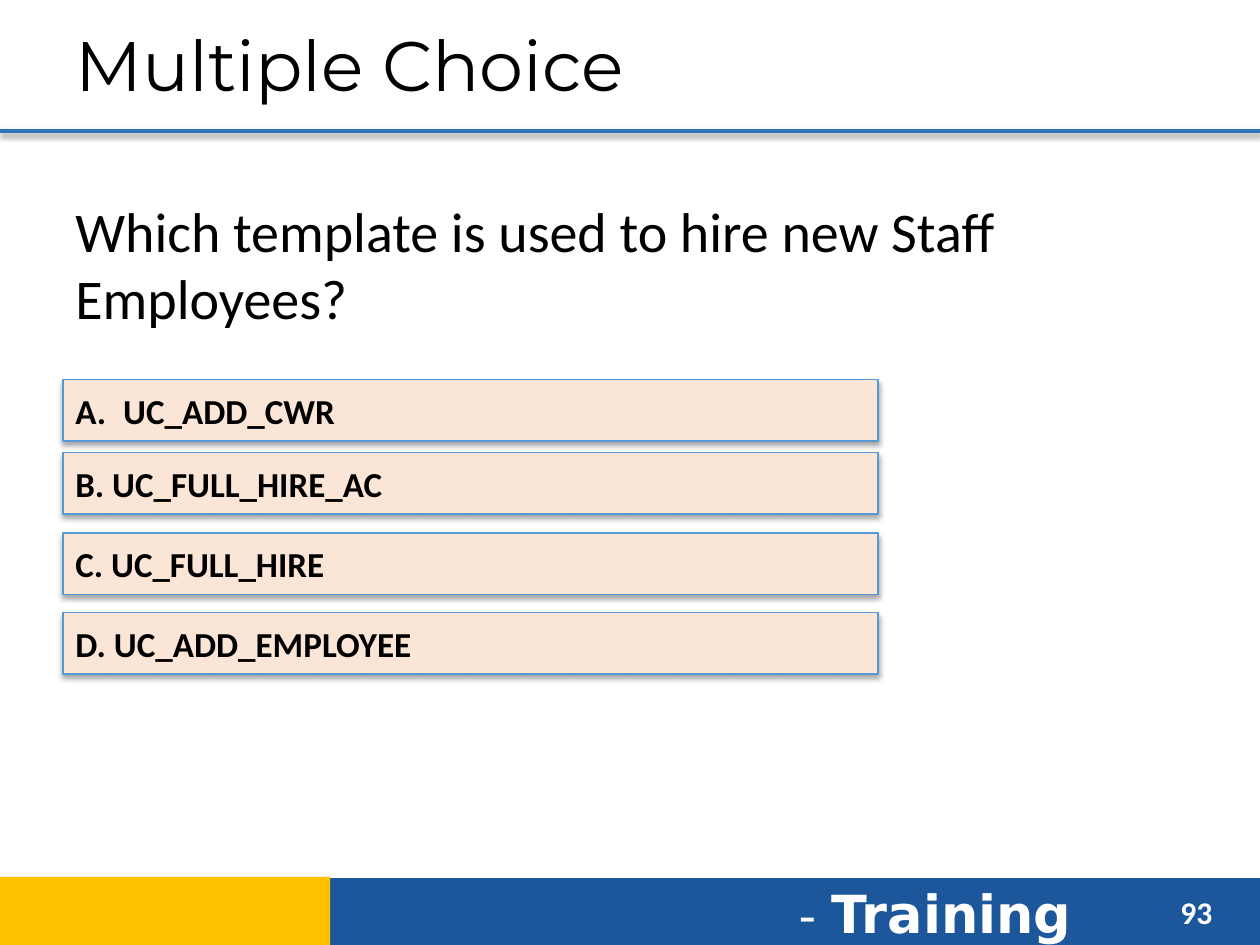
from lxml import etree
from pptx import Presentation
from pptx.dml.color import RGBColor
from pptx.enum.shapes import MSO_CONNECTOR, MSO_SHAPE
from pptx.enum.text import MSO_ANCHOR, MSO_AUTO_SIZE, PP_ALIGN
from pptx.oxml.ns import qn
from pptx.util import Inches, Pt

RECTANGLE = MSO_SHAPE.RECTANGLE
STRAIGHT = MSO_CONNECTOR.STRAIGHT
TOP, MIDDLE = MSO_ANCHOR.TOP, MSO_ANCHOR.MIDDLE
LEFT = PP_ALIGN.LEFT
NO_AUTOFIT = MSO_AUTO_SIZE.NONE

BLACK = RGBColor(0x00, 0x00, 0x00)
WHITE = RGBColor(0xFF, 0xFF, 0xFF)
FOOTER_BLUE = RGBColor(0x1D, 0x57, 0x9B)
FOOTER_GOLD = RGBColor(0xFF, 0xC0, 0x00)
RULE_BLUE = RGBColor(0x2E, 0x75, 0xB6)
ANSWER_FILL = RGBColor(0xFB, 0xE5, 0xD6)
ANSWER_BORDER = RGBColor(0x56, 0x98, 0xD3)

TITLE_FORMAT = {"name": "Montserrat", "size": Pt(40), "bold": False}
QUESTION_FORMAT = {"name": "Calibri", "size": Pt(32)}
ANSWER_FORMAT = {"name": "Calibri", "size": Pt(20), "bold": True}
NUMBER_FORMAT = {"name": "Calibri", "size": Pt(18), "bold": True}
DASH_FORMAT = {"name": "DejaVu Sans", "size": Pt(28)}
TRAINING_FORMAT = {"name": "DejaVu Sans", "size": Pt(30), "bold": True}

ANSWERS = [
    (3.01, "UC_ADD_CWR"),
    (3.59, "B. UC_FULL_HIRE_AC"),
    (4.23, "C. UC_FULL_HIRE"),
    (4.86, "D. UC_ADD_EMPLOYEE"),
]


def add_run(paragraph, text, font_format, color):
    run = paragraph.add_run()
    run.text = text
    for attribute, value in font_format.items():
        setattr(run.font, attribute, value)
    run.font.color.rgb = color


def cast_shadow(element, opacity, distance):
    """Add a soft black shadow that falls straight down."""
    effects = etree.SubElement(element.spPr, qn("a:effectLst"))
    shadow = etree.SubElement(
        effects, qn("a:outerShdw"), blurRad=str(Pt(3.1)),
        dist=str(Pt(distance)), dir="5400000", rotWithShape="0")
    color = etree.SubElement(shadow, qn("a:srgbClr"), val="000000")
    etree.SubElement(color, qn("a:alpha"), val=str(opacity * 1000))


def number_with_letter(paragraph):
    """Number the paragraph as A. with a hanging indent."""
    properties = paragraph._p.get_or_add_pPr()
    properties.set("marL", str(Inches(0.38)))
    properties.set("indent", str(Inches(-0.38)))
    etree.SubElement(properties, qn("a:buFont"), typeface="+mj-lt")
    etree.SubElement(properties, qn("a:buAutoNum"), type="alphaUcPeriod")


def add_rectangle(slide, left, top, width, height, fill):
    rectangle = slide.shapes.add_shape(
        RECTANGLE, Inches(left), Inches(top), Inches(width), Inches(height))
    rectangle.fill.solid()
    rectangle.fill.fore_color.rgb = fill
    return rectangle


def add_footer_band(slide, left, top, width, height, fill):
    band = add_rectangle(slide, left, top, width, height, fill)
    band.line.fill.background()
    band.shadow.inherit = False


def add_text(slide, left, top, width, height, runs, color):
    box = slide.shapes.add_textbox(
        Inches(left), Inches(top), Inches(width), Inches(height))
    frame = box.text_frame
    frame.word_wrap = True
    frame.vertical_anchor = TOP
    for text, font_format in runs:
        add_run(frame.paragraphs[0], text, font_format, color)


def add_title(slide, text):
    title = slide.shapes.title
    title.left, title.top = Inches(0.5), Inches(0.04)
    title.width, title.height = Inches(9), Inches(0.93)
    frame = title.text_frame
    frame.auto_size = NO_AUTOFIT
    frame.vertical_anchor = MIDDLE
    paragraph = frame.paragraphs[0]
    paragraph.alignment = LEFT
    add_run(paragraph, text, TITLE_FORMAT, BLACK)


def add_title_rule(slide):
    y = Inches(1.04)
    rule = slide.shapes.add_connector(STRAIGHT, 0, y, Inches(10), y)
    rule.line.color.rgb = RULE_BLUE
    rule.line.width = Pt(2.25)
    cast_shadow(rule._element, opacity=38, distance=1.6)


def add_answer(slide, top, text, numbered):
    answer = add_rectangle(slide, 0.5, top, 6.47, 0.49, ANSWER_FILL)
    answer.line.color.rgb = ANSWER_BORDER
    answer.line.width = Pt(0.75)
    cast_shadow(answer._element, opacity=35, distance=1.8)
    frame = answer.text_frame
    frame.word_wrap = True
    frame.vertical_anchor = MIDDLE
    paragraph = frame.paragraphs[0]
    paragraph.alignment = LEFT
    if numbered:
        number_with_letter(paragraph)
    add_run(paragraph, text, ANSWER_FORMAT, BLACK)


def main():
    presentation = Presentation()
    presentation.slide_width = Inches(10)
    presentation.slide_height = Inches(7.5)
    slide = presentation.slides.add_slide(presentation.slide_layouts[5])

    add_footer_band(slide, 2.61, 6.97, 7.39, 0.55, FOOTER_BLUE)
    add_text(slide, 6.24, 6.94, 2.8, 0.61,
             [("- ", DASH_FORMAT), ("Training", TRAINING_FORMAT)], WHITE)
    add_title_rule(slide)
    add_text(slide, 9.27, 7.04, 0.6, 0.4, [("93", NUMBER_FORMAT)], WHITE)
    add_footer_band(slide, -0.01, 6.96, 2.63, 0.55, FOOTER_GOLD)

    add_title(slide, "Multiple Choice")
    add_text(slide, 0.5, 1.51, 9, 5.19,
             [("Which template is used to hire new Staff Employees?",
               QUESTION_FORMAT)], BLACK)
    for position, (top, text) in enumerate(ANSWERS):
        add_answer(slide, top, text, numbered=position == 0)

    presentation.save("out.pptx")


if __name__ == "__main__":
    main()
